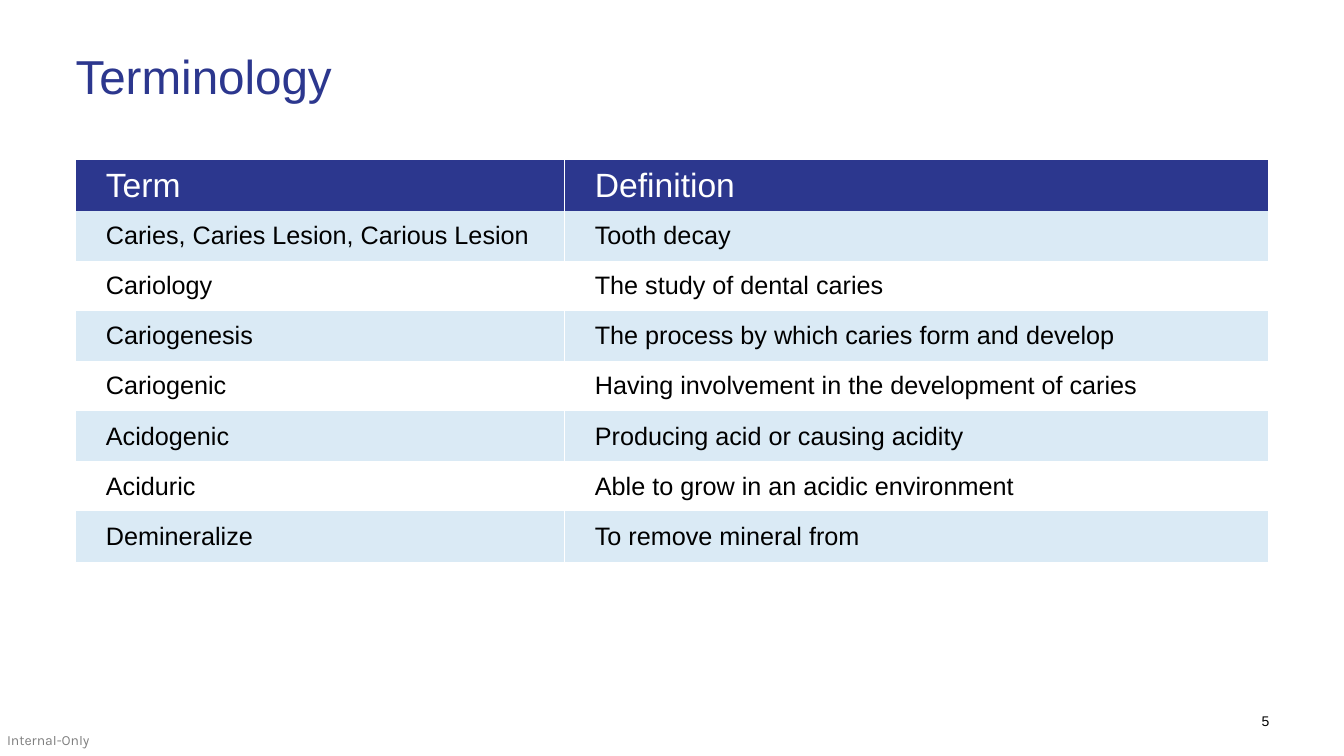
"""Builds a slide with a table of dental caries terminology."""
import pptx
import pptx.dml.color
import pptx.enum.text
import pptx.oxml
import pptx.oxml.ns
import pptx.util

Inches = pptx.util.Inches
Pt = pptx.util.Pt
Align = pptx.enum.text.PP_ALIGN
Anchor = pptx.enum.text.MSO_ANCHOR

COLORS = {"navy": "2C378E", "band": "DAEAF5", "white": "FFFFFF", "black": "000000"}
NO_STYLE = "{2D5ABB26-0587-4C30-8999-92F81FD0307C}"
TERMS = [
    ("Term", "Definition"),
    ("Caries, Caries Lesion, Carious Lesion", "Tooth decay"),
    ("Cariology", "The study of dental caries"),
    ("Cariogenesis", "The process by which caries form and develop"),
    ("Cariogenic", "Having involvement in the development of caries"),
    ("Acidogenic", "Producing acid or causing acidity"),
    ("Aciduric", "Able to grow in an acidic environment"),
    ("Demineralize", "To remove mineral from"),
]


def rgb(name):
    return pptx.dml.color.RGBColor.from_string(COLORS[name])


def write(tf, text, size=18, color="black", font="Arial", align=Align.LEFT,
          spacing=None, alpha=None):
    p = tf.paragraphs[0]
    p.alignment = align
    if spacing:
        p.line_spacing = spacing
    r = p.add_run()
    r.text = text
    r.font.size = Pt(size)
    r.font.name = font
    r.font.color.rgb = rgb(color)
    if alpha:
        clr = r.font.fill._xPr.find(".//" + pptx.oxml.ns.qn("a:srgbClr"))
        clr.append(pptx.oxml.parse_xml(
            f'<a:alpha {pptx.oxml.ns.nsdecls("a")} val="{alpha * 1000}"/>'))


class SlideBuilder:
    def __init__(self, prs):
        self.s = prs.slides.add_slide(prs.slide_layouts[6])
        self.s.background.fill.solid()
        self.s.background.fill.fore_color.rgb = rgb("white")

    def text(self, x, y, w, h, text, **style):
        sp = self.s.shapes.add_textbox(Inches(x), Inches(y), Inches(w), Inches(h))
        tf = sp.text_frame
        tf.word_wrap = True
        tf.margin_left = tf.margin_right = tf.margin_top = tf.margin_bottom = 0
        write(tf, text, **style)

    def border(self, cell, side):
        tc_pr = cell._tc.get_or_add_tcPr()
        tc_pr.append(pptx.oxml.parse_xml(
            f'<a:{side} {pptx.oxml.ns.nsdecls("a")} w="{Pt(1)}"><a:solidFill>'
            f'<a:srgbClr val="{COLORS["white"]}"/></a:solidFill></a:{side}>'))

    def cell(self, cell, text, fill, sides, **style):
        cell.margin_left = Inches(0.3)
        cell.vertical_anchor = Anchor.MIDDLE
        for side in sides:
            self.border(cell, side)
        if fill:
            cell.fill.solid()
            cell.fill.fore_color.rgb = rgb(fill)
        else:
            cell.fill.background()
        write(cell.text_frame, text, **style)

    def table(self, x, y, h, widths, rows):
        frame = self.s.shapes.add_table(len(rows), len(widths), Inches(x), Inches(y),
                                        Inches(sum(widths)), Inches(h))
        table = frame.table
        table.horz_banding = False
        table._tbl.tblPr.find(pptx.oxml.ns.qn("a:tableStyleId")).text = NO_STYLE
        for column, width in zip(table.columns, widths):
            column.width = Inches(width)
        for i, row in enumerate(rows):
            fill = "navy" if i == 0 else "band" if i % 2 else None
            style = {"size": 24, "color": "white"} if i == 0 else {}
            for j, text in enumerate(row):
                sides = ("lnL", "lnR") if j else ("lnR",)
                self.cell(table.cell(i, j), text, fill, sides, **style)


def main():
    prs = pptx.Presentation()
    prs.slide_width, prs.slide_height = Inches(13.33), Inches(7.5)
    slide = SlideBuilder(prs)
    slide.text(12.01, 7.07, 0.58, 0.17, "5", size=10, align=Align.RIGHT)
    slide.text(0.07, 7.26, 0.9, 0.17, "Internal-Only", size=10, font="Karla", alpha=50)
    slide.text(0.75, 0.53, 11.83, 1.06, "Terminology", size=34, color="navy", spacing=0.9)
    slide.table(0.75, 1.59, 3.98, (4.85, 6.98), TERMS)
    prs.save("out.pptx")


if __name__ == "__main__":
    main()
